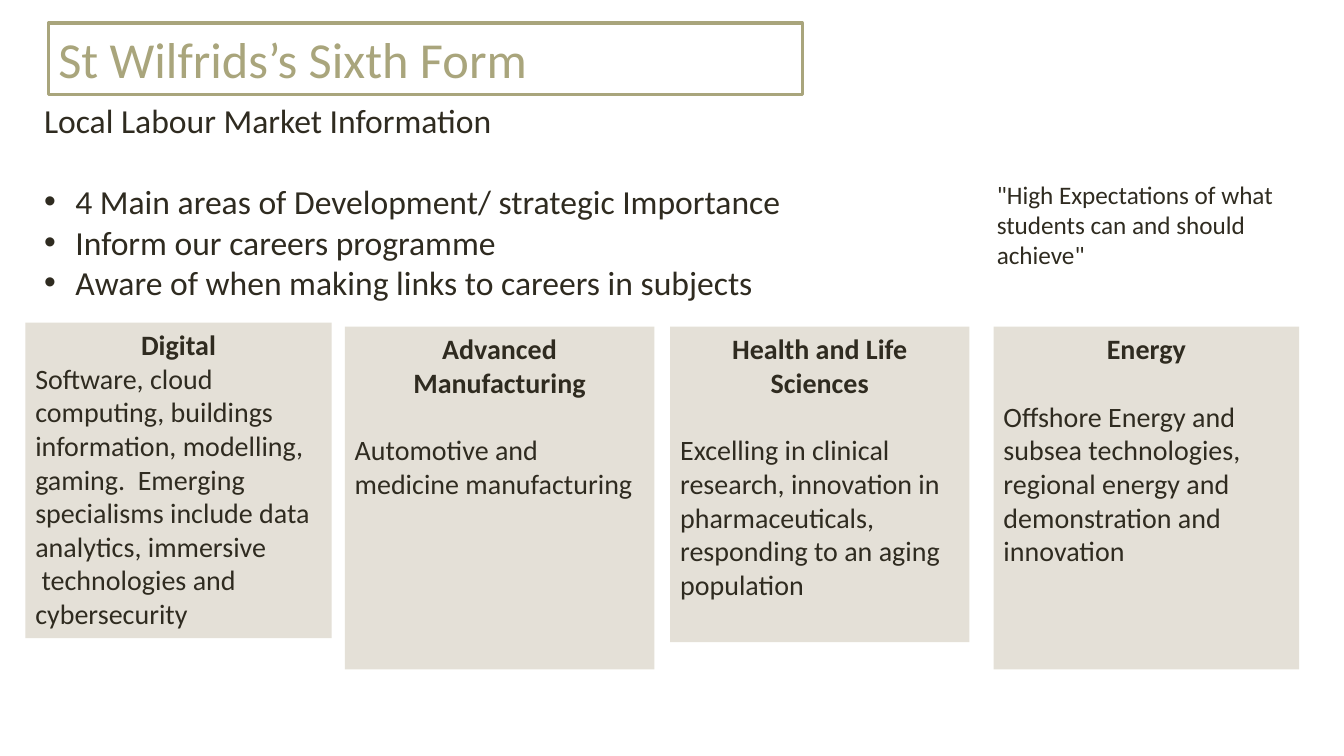
"""Build the slide on local labour market information for the sixth form."""
from dataclasses import dataclass
from typing import Optional

from lxml import etree
from pptx import Presentation
from pptx.dml.color import RGBColor
from pptx.enum.shapes import MSO_SHAPE
from pptx.enum.text import MSO_ANCHOR, PP_ALIGN
from pptx.oxml.ns import qn
from pptx.util import Cm, Pt

RECT = MSO_SHAPE.RECTANGLE
TOP = MSO_ANCHOR.TOP
LEFT, CENTER = PP_ALIGN.LEFT, PP_ALIGN.CENTER

DARK = RGBColor(0x2F, 0x2B, 0x20)
SAND = RGBColor(0xE4, 0xE0, 0xD7)
OLIVE = RGBColor(0xA9, 0xA5, 0x7C)
FONT = "Calibri"
LINE_HEIGHT = 1.22
BULLET_INDENT = Cm(0.79)


@dataclass(frozen=True)
class Para:
    text: str
    heading: bool = False
    bullet: bool = False
    lines_before: int = 0


@dataclass(frozen=True)
class Box:
    left: float
    top: float
    width: float
    height: float
    size: int
    paras: tuple[Para, ...]
    color: RGBColor = DARK
    fill: Optional[RGBColor] = None
    line: Optional[RGBColor] = None


def card(left: float, top: float, width: float, height: float,
         heading: str, *paras: Para) -> Box:
    """Describe a filled card with a bold, centred heading."""
    return Box(left, top, width, height, 20,
               (Para(heading, heading=True), *paras), fill=SAND)


BOXES = (
    card(0.64, 8.13, 7.72, 7.95, "Digital",
         Para("Software, cloud computing, buildings information, modelling, "
              "gaming.  Emerging specialisms include data analytics, immersive"),
         Para(" technologies and cybersecurity")),
    card(16.89, 8.23, 7.54, 7.95, "Health and Life Sciences",
         Para("Excelling in clinical research, innovation in pharmaceuticals, "
              "responding to an aging population", lines_before=1)),
    card(8.69, 8.23, 7.8, 8.64, "Advanced Manufacturing",
         Para("Automotive and medicine manufacturing", lines_before=1)),
    card(25.04, 8.23, 7.7, 8.64, "Energy",
         Para("Offshore Energy and subsea technologies, regional energy and "
              "demonstration and innovation", lines_before=1)),
    Box(0.86, 2.39, 25.22, 6.15, 24, (
        Para("Local Labour Market Information"),
        Para("4 Main areas of Development/ strategic Importance",
             bullet=True, lines_before=1),
        Para("Inform our careers programme", bullet=True),
        Para("Aware of when making links to careers in subjects", bullet=True),
    )),
    Box(1.22, 0.58, 19, 1.8, 36, (Para("St Wilfrids’s Sixth Form"),),
        color=OLIVE, line=OLIVE),
    Box(24.87, 4.39, 7.62, 2.57, 18, (
        Para('"High Expectations of what students can and should achieve"'),
    )),
)


def add_bullet(p) -> None:
    """Give a paragraph a hanging round bullet."""
    pPr = p._p.get_or_add_pPr()
    pPr.set("marL", str(BULLET_INDENT))
    pPr.set("indent", str(-BULLET_INDENT))
    etree.SubElement(pPr, qn("a:buFont")).set("typeface", "Arial")
    etree.SubElement(pPr, qn("a:buChar")).set("char", "•")


def write_paras(tf, box: Box) -> None:
    """Write and format the paragraphs of a box."""
    tf.word_wrap = True
    tf.vertical_anchor = TOP
    for i, para in enumerate(box.paras):
        p = tf.paragraphs[0] if i == 0 else tf.add_paragraph()
        p.text = para.text
        p.alignment = CENTER if para.heading else LEFT
        if para.lines_before:
            p.space_before = Pt(round(para.lines_before * box.size * LINE_HEIGHT, 1))
        if para.bullet:
            add_bullet(p)
        for r in p.runs:
            r.font.name = FONT
            r.font.size = Pt(box.size)
            r.font.bold = para.heading
            r.font.color.rgb = box.color


def add_box(slide, box: Box) -> None:
    """Draw a box as a rectangle, or as a text box if it is unpainted."""
    place = Cm(box.left), Cm(box.top), Cm(box.width), Cm(box.height)
    if box.fill is None and box.line is None:
        sp = slide.shapes.add_textbox(*place)
    else:
        sp = slide.shapes.add_shape(RECT, *place)
        sp.shadow.inherit = False
        if box.fill is None:
            sp.fill.background()
        else:
            sp.fill.solid()
            sp.fill.fore_color.rgb = box.fill
        if box.line is None:
            sp.line.fill.background()
        else:
            sp.line.color.rgb = box.line
            sp.line.width = Pt(2.25)
    write_paras(sp.text_frame, box)


def main() -> None:
    """Create and save the presentation."""
    prs = Presentation()
    prs.slide_width, prs.slide_height = Cm(33.87), Cm(19.05)
    slide = prs.slides.add_slide(prs.slide_layouts[6])
    for box in BOXES:
        add_box(slide, box)
    prs.save("out.pptx")


if __name__ == "__main__":
    main()
